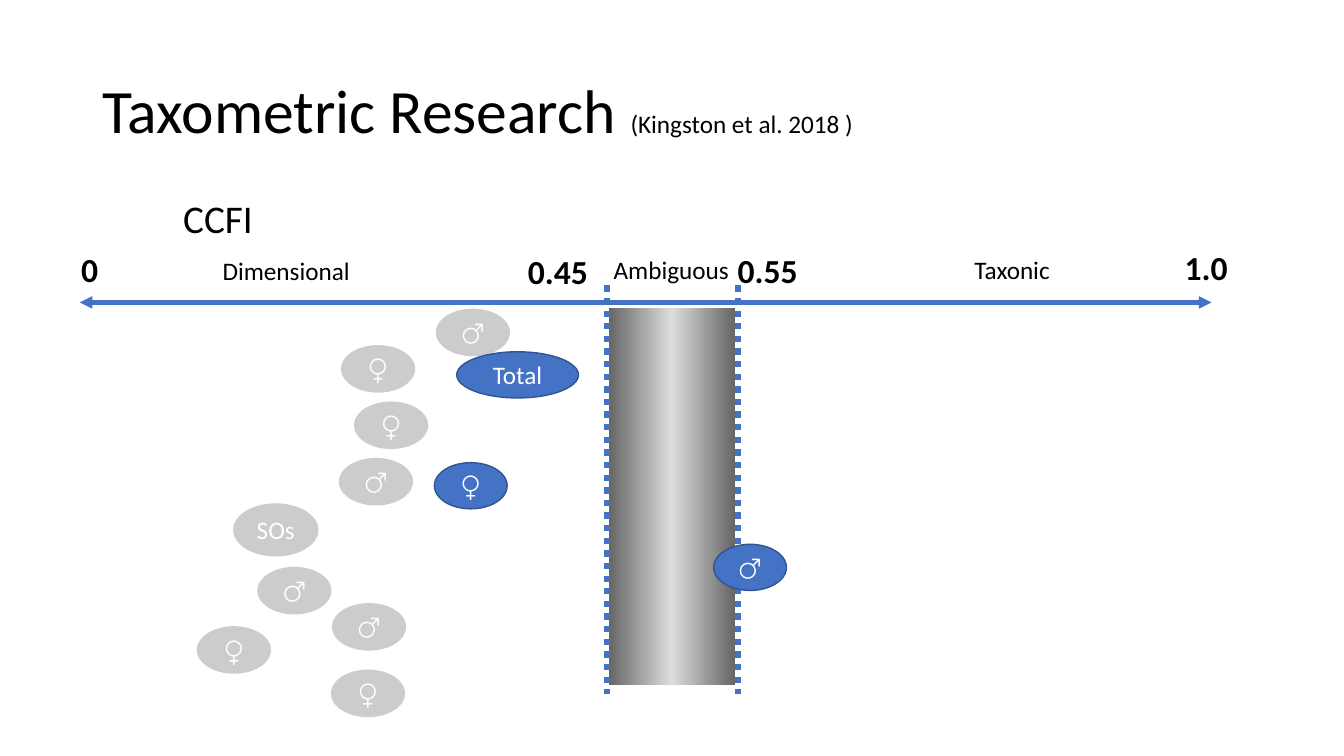
from lxml import etree
from pptx import Presentation
from pptx.dml.color import RGBColor
from pptx.enum.dml import MSO_LINE
from pptx.enum.shapes import MSO_CONNECTOR, MSO_SHAPE
from pptx.enum.text import MSO_ANCHOR, MSO_AUTO_SIZE, PP_ALIGN
from pptx.oxml.ns import qn
from pptx.util import Pt

STRAIGHT = MSO_CONNECTOR.STRAIGHT
OVAL, RECTANGLE = MSO_SHAPE.OVAL, MSO_SHAPE.RECTANGLE
LEFT, CENTER = PP_ALIGN.LEFT, PP_ALIGN.CENTER
MIDDLE, TOP = MSO_ANCHOR.MIDDLE, MSO_ANCHOR.TOP
NO_AUTOFIT = MSO_AUTO_SIZE.NONE
DOTTED = MSO_LINE.ROUND_DOT

COLOURS = {"text": "000000", "white": "FFFFFF", "blue": "4472C4", "navy": "325491",
           "grey": "CCCCCC", "band edge": "666666", "band middle": "DDDDDD"}
MALE, FEMALE = "♂", "♀"
BAND_TOP, BAND_HEIGHT = 220.3, 269.3
CUTOFF_TOP, CUTOFF_BOTTOM = 203.8, 495.4

RANGES = [("Dimensional", 151.9, 178.6, LEFT),
          ("Ambiguous", 421.2, 177.8, CENTER),
          ("Taxonic", 664.6, 177.8, CENTER)]
TICKS = [("0", 45.4, 174.2, 37.4), ("0.45", 362.2, 175.7, 72.7),
         ("0.55", 511.9, 175, 72.7), ("1.0", 825.1, 172.8, 72.7)]
EARLIER_SAMPLES = [(MALE, 311.8, 221, 52, 33), (FEMALE, 244.1, 247, 52, 33),
                   (FEMALE, 253.4, 287.3, 52, 33), (MALE, 242.6, 327.6, 52, 33),
                   ("SOs", 167, 360, 60, 37), (MALE, 184.3, 405.4, 52, 33),
                   (MALE, 237.6, 431.3, 52, 33), (FEMALE, 141.1, 447.8, 52, 33),
                   (FEMALE, 236.9, 478.8, 52, 33)]
KINGSTON_SAMPLES = [(MALE, 509.8, 388.8, 52, 33), (FEMALE, 310.3, 330.5, 52, 33),
                    ("Total", 326.2, 251.3, 87, 33)]


def rgb(colour):
    """Return the named colour."""
    return RGBColor.from_string(COLOURS[colour])


def assign(target, values):
    """Set each attribute in values on target."""
    for name, value in values.items():
        setattr(target, name, value)


class TaxometricSlide:
    """Holds the style and the current slide."""

    font_name = "Calibri"

    def __init__(self, deck):
        """Add a title-only slide to the deck."""
        self.slide = deck.slides.add_slide(deck.slide_layouts[5])

    def add_text(self, paragraph, text, size, colour="text", bold=False):
        """Add a formatted run to a paragraph."""
        run = paragraph.add_run()
        run.text = text
        assign(run.font, {"name": self.font_name, "size": Pt(size), "bold": bold})
        run.font.color.rgb = rgb(colour)

    def title(self, parts, left, top, width, height):
        """Place the title and fill in its parts."""
        heading = self.slide.shapes.title
        assign(heading, {"left": Pt(left), "top": Pt(top),
                         "width": Pt(width), "height": Pt(height)})
        assign(heading.text_frame, {"vertical_anchor": MIDDLE, "word_wrap": True,
                                    "auto_size": NO_AUTOFIT})
        paragraph = heading.text_frame.paragraphs[0]
        assign(paragraph, {"alignment": LEFT, "line_spacing": 0.9})
        for text, size in parts:
            self.add_text(paragraph, text, size)

    def label(self, text, left, top, width, size, align=CENTER, bold=False):
        """Add a one-line text box."""
        box = self.slide.shapes.add_textbox(Pt(left), Pt(top), Pt(width), Pt(size * 1.5))
        assign(box.text_frame, {"word_wrap": True, "vertical_anchor": TOP})
        paragraph = box.text_frame.paragraphs[0]
        paragraph.alignment = align
        self.add_text(paragraph, text, size, bold=bold)

    def line(self, start, end, width, dash=None, arrows=False):
        """Add a straight line, dotted or with an arrowhead at both ends."""
        connector = self.slide.shapes.add_connector(STRAIGHT, *map(Pt, start + end))
        connector.line.color.rgb = rgb("blue")
        assign(connector.line, {"width": Pt(width), "dash_style": dash})
        properties = connector._element.spPr
        if arrows:
            for tag in ("a:headEnd", "a:tailEnd"):
                etree.SubElement(properties.find(qn("a:ln")), qn(tag), type="triangle")
        etree.SubElement(properties, qn("a:effectLst"))

    def band(self, left, top, width, height, stops):
        """Add a rectangle with a horizontal gradient."""
        band = self.slide.shapes.add_shape(RECTANGLE, Pt(left), Pt(top), Pt(width), Pt(height))
        band.shadow.inherit = False
        band.line.fill.background()
        band.fill.gradient()
        band.fill.gradient_angle = 0
        stop_list = band._element.spPr.find(f".//{qn('a:gsLst')}")
        stop_list.clear()
        for percent, colour in stops:
            stop = etree.SubElement(stop_list, qn("a:gs"), pos=str(percent * 1000))
            etree.SubElement(stop, qn("a:srgbClr"), val=COLOURS[colour])

    def sample(self, text, left, top, width, height, fill, outline):
        """Add an ellipse that marks one sample."""
        ellipse = self.slide.shapes.add_shape(OVAL, Pt(left), Pt(top), Pt(width), Pt(height))
        ellipse.shadow.inherit = False
        ellipse.fill.solid()
        ellipse.fill.fore_color.rgb = rgb(fill)
        ellipse.line.color.rgb = rgb(outline)
        ellipse.line.width = Pt(1)
        assign(ellipse.text_frame, {"word_wrap": False, "vertical_anchor": MIDDLE})
        paragraph = ellipse.text_frame.paragraphs[0]
        paragraph.alignment = CENTER
        self.add_text(paragraph, text, 18, "white")


def main():
    """Build and save the slide."""
    deck = Presentation()
    assign(deck, {"slide_width": Pt(960), "slide_height": Pt(540)})
    research = TaxometricSlide(deck)
    research.title([("Taxometric Research ", 44), ("(Kingston et al. 2018 )", 18)],
                   66, 28.8, 828, 104.4)
    research.line((57, 216), (865.4, 216), 3, arrows=True)
    research.band(434.9, BAND_TOP, 90, BAND_HEIGHT,
                  [(0, "band edge"), (50, "band middle"), (100, "band edge")])
    for cutoff in (433.4, 527):
        research.line((cutoff, CUTOFF_TOP), (cutoff, CUTOFF_BOTTOM), 4.5, dash=DOTTED)
    research.label("CCFI", 123.8, 135.4, 720, 28, LEFT)
    for text, left, top, align in RANGES:
        research.label(text, left, top, 116.6, 18, align)
    for text, left, top, width in TICKS:
        research.label(text, left, top, width, 24, bold=True)
    for placed in EARLIER_SAMPLES:
        research.sample(*placed, "grey", "grey")
    for placed in KINGSTON_SAMPLES:
        research.sample(*placed, "blue", "navy")
    deck.save("out.pptx")


if __name__ == "__main__":
    main()
